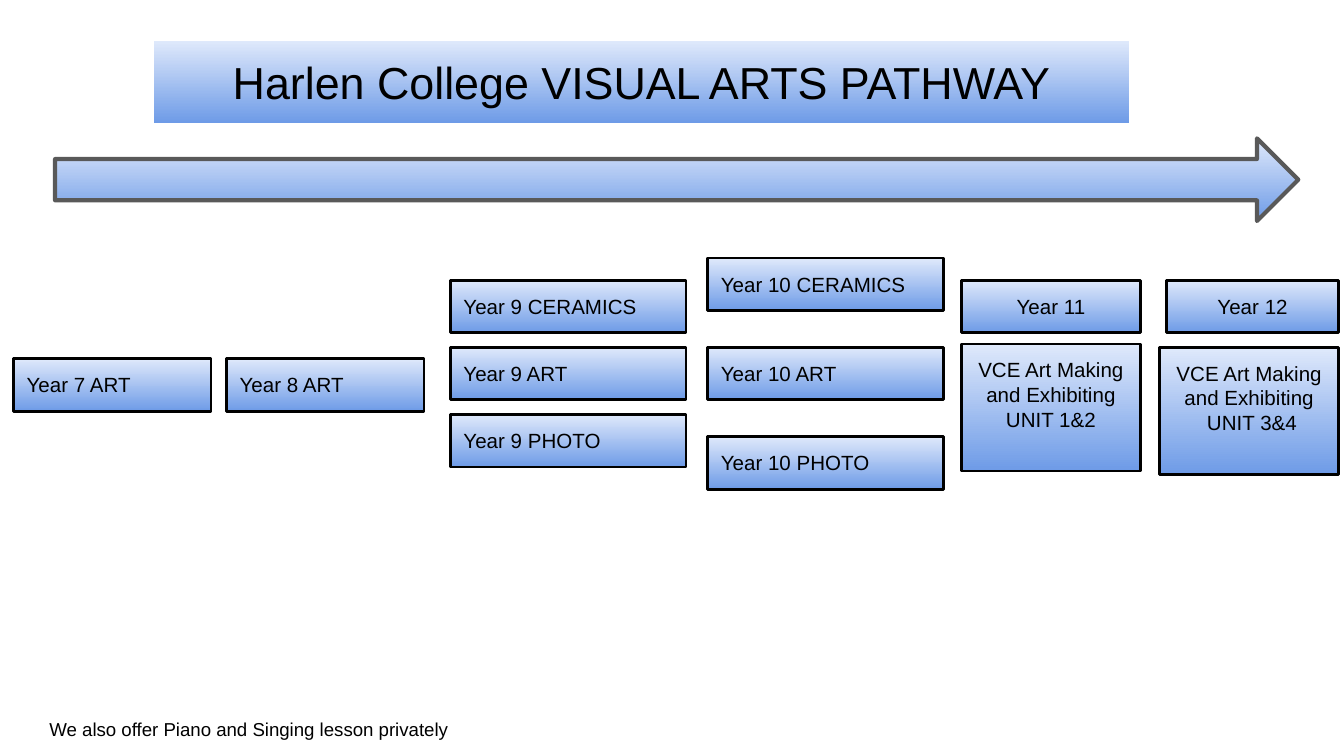
from pptx import Presentation
from pptx.dml.color import RGBColor
from pptx.enum.shapes import MSO_SHAPE as SHAPE
from pptx.enum.text import MSO_ANCHOR as ANCHOR, MSO_AUTO_SIZE as AUTO, PP_ALIGN as ALIGN
from pptx.util import Pt

PX = 4572  # 200 px to the inch
PALE = RGBColor(0xDF, 0xE9, 0xFB)
BLUE = RGBColor(0x6E, 0x9B, 0xE7)
BLACK = RGBColor(0, 0, 0)
GREY = RGBColor(0x59, 0x59, 0x59)


def paint(shape, line_color=None, line_width=1.5):
    shape.fill.gradient()
    shape.fill.gradient_angle = 270
    for stop, color, position in zip(shape.fill.gradient_stops, (PALE, BLUE), (0, 1)):
        stop.color.rgb = color
        stop.position = position
    if line_color is None:
        shape.line.fill.background()
    else:
        shape.line.color.rgb = line_color
        shape.line.width = Pt(line_width)
    shape.shadow.inherit = False


def write(shape, text, size, align=ALIGN.LEFT, anchor=ANCHOR.TOP):
    frame = shape.text_frame
    frame.text = text
    frame.word_wrap = True
    frame.auto_size = AUTO.NONE
    frame.vertical_anchor = anchor
    frame.margin_left = frame.margin_right = 20 * PX
    frame.margin_top = frame.margin_bottom = 20 * PX
    for para in frame.paragraphs:
        para.alignment = align
        for span in para.runs:
            span.font.name = "Arial"
            span.font.size = Pt(size)
            span.font.color.rgb = BLACK


deck = Presentation()
deck.slide_width, deck.slide_height = 2000 * PX, 1125 * PX
page = deck.slides.add_slide(deck.slide_layouts[5])

# Title band
title = page.shapes.title
title.left, title.top, title.width, title.height = 229 * PX, 61 * PX, 1451 * PX, 122 * PX
paint(title)
write(title, "Harlen College VISUAL ARTS PATHWAY", 24, ALIGN.CENTER, ANCHOR.MIDDLE)

# Progress arrow
arrow = page.shapes.add_shape(SHAPE.RIGHT_ARROW, 82 * PX, 206 * PX, 1850 * PX, 123 * PX)
paint(arrow, GREY, 2.25)

# Year columns: left, width, alignment, then (top, height, text) of each box
ROW = 78
UNIT = 189
VCE = "VCE Art Making and Exhibiting\n"
columns = [
    (20, 294, ALIGN.LEFT, [(534, ROW, "Year 7 ART")]),
    (337, 294, ALIGN.LEFT, [(534, ROW, "Year 8 ART")]),
    (670, 351, ALIGN.LEFT, [(417, ROW, "Year 9 CERAMICS"),
                            (517, ROW, "Year 9 ART"),
                            (617, ROW, "Year 9 PHOTO")]),
    (1053, 351, ALIGN.LEFT, [(384, ROW, "Year 10 CERAMICS"),
                             (517, ROW, "Year 10 ART"),
                             (650, ROW, "Year 10 PHOTO")]),
    (1431, 266, ALIGN.CENTER, [(417, ROW, "Year 11"), (512, UNIT, VCE + "UNIT 1&2")]),
    (1736, 256, ALIGN.CENTER, [(417, ROW, "Year 12")]),
    (1726, 266, ALIGN.CENTER, [(517, UNIT, VCE + " UNIT 3&4")]),
]
for left, width, align, boxes in columns:
    for top, height, text in boxes:
        box = page.shapes.add_shape(SHAPE.RECTANGLE, left * PX, top * PX,
                                    width * PX, height * PX)
        paint(box, BLACK)
        write(box, text, 11, align)

# Footnote
note = page.shapes.add_textbox(54 * PX, 1049 * PX, 732 * PX, 74 * PX)
write(note, "We also offer Piano and Singing lesson privately", 10)

deck.save("out.pptx")
